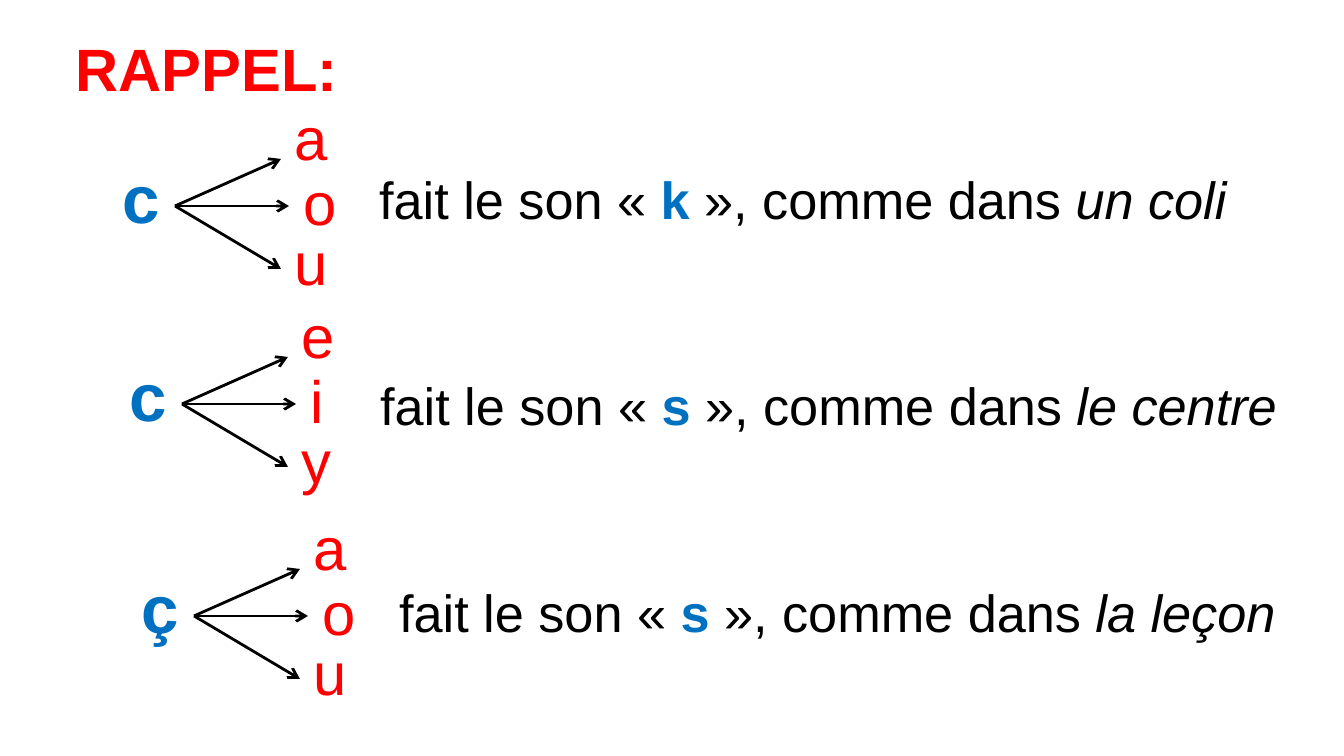
from pptx import Presentation
from pptx.dml.color import RGBColor
from pptx.enum.shapes import MSO_CONNECTOR
from pptx.enum.text import MSO_ANCHOR, MSO_AUTO_SIZE, PP_ALIGN
from pptx.oxml.ns import qn
from pptx.util import Emu, Pt
from lxml.etree import SubElement

PX = 914400 / 134.4
RED = RGBColor(0xFF, 0x00, 0x00)
BLUE = RGBColor(0x00, 0x70, 0xC0)
BLACK = RGBColor(0x00, 0x00, 0x00)

# Content: consonant, vowels with box widths, sound, example
# Places: fork point of the arrows, sentence box (left, top, width)
RULES = [
    {"consonant": "c", "vowels": [("a", 60), ("o", 60), ("u", 60)],
     "sound": "k", "example": "un coli",
     "fork": (175, 206), "sentence": (366, 161, 884)},
    {"consonant": "c", "vowels": [("e", 60), ("i", 40), ("y", 58)],
     "sound": "s", "example": "le centre",
     "fork": (182, 404), "sentence": (367, 367, 935)},
    {"consonant": "ç", "vowels": [("a", 60), ("o", 60), ("u", 60)],
     "sound": "s", "example": "la leçon",
     "fork": (194, 616), "sentence": (386, 574, 914)},
]

# Offsets from the fork point
ARROW_TIPS = [(106, -47), (114, 0), (106, 63)]
VOWEL_OFFSETS = [(106, -112), (115, -47), (106, 13)]
CONSONANT_OFFSET = (-66, -56)

# Formats
TITLE = {"size": Pt(32), "name": "Arial", "bold": True}
VOWEL = {"size": Pt(32), "name": "Arial"}
CONSONANT = {"size": Pt(36), "name": "Arial", "bold": True}
PLAIN = {"size": Pt(28), "name": "Arial"}
STRONG = {**PLAIN, "bold": True}
EXAMPLE = {**PLAIN, "italic": True}


def px(value):
    return Emu(round(value * PX))


def add_run(paragraph, text, color, font_format):
    run = paragraph.add_run()
    run.text = text
    run.font.color.rgb = color
    for attribute, value in font_format.items():
        setattr(run.font, attribute, value)


def add_text(shapes, box, runs):
    frame = shapes.add_textbox(*map(px, box)).text_frame
    frame.word_wrap = False
    frame.auto_size = MSO_AUTO_SIZE.SHAPE_TO_FIT_TEXT
    for run in runs:
        add_run(frame.paragraphs[0], *run)


def add_arrow(shapes, start, end):
    arrow = shapes.add_connector(MSO_CONNECTOR.STRAIGHT, *map(px, start + end))
    arrow.line.color.rgb = BLACK
    arrow.line.width = Pt(1.5)
    SubElement(arrow.line._get_or_add_ln(), qn("a:tailEnd"), type="arrow")
    SubElement(arrow._element.spPr, qn("a:effectLst"))


def add_rule(slide, rule):
    x, y = rule["fork"]

    # Consonant, arrows and vowels
    shapes = slide.shapes.add_group_shape().shapes
    for dx, dy in ARROW_TIPS:
        add_arrow(shapes, (x, y), (x + dx, y + dy))
    for (vowel, width), (dx, dy) in zip(rule["vowels"], VOWEL_OFFSETS):
        add_text(shapes, (x + dx, y + dy, width, 86), [(vowel, RED, VOWEL)])
    dx, dy = CONSONANT_OFFSET
    add_text(shapes, (x + dx, y + dy, 64, 95),
             [(rule["consonant"], BLUE, CONSONANT)])

    # Sentence
    add_text(slide.shapes, (*rule["sentence"], 77), [
        ("fait le son « ", BLACK, PLAIN),
        (rule["sound"] + " ", BLUE, STRONG),
        ("», comme dans ", BLACK, PLAIN),
        (rule["example"], BLACK, EXAMPLE),
    ])


def main():
    presentation = Presentation()
    presentation.slide_width, presentation.slide_height = px(1344), px(756)
    slide = presentation.slides.add_slide(presentation.slide_layouts[5])

    # Title
    title = slide.shapes.title
    title.left, title.top, title.width, title.height = map(px, (62, 25, 385, 106))
    frame = title.text_frame
    frame.vertical_anchor = MSO_ANCHOR.TOP
    frame.auto_size = MSO_AUTO_SIZE.NONE
    frame.paragraphs[0].alignment = PP_ALIGN.LEFT
    add_run(frame.paragraphs[0], "RAPPEL:", RED, TITLE)

    for rule in RULES:
        add_rule(slide, rule)
    presentation.save("out.pptx")


if __name__ == "__main__":
    main()
